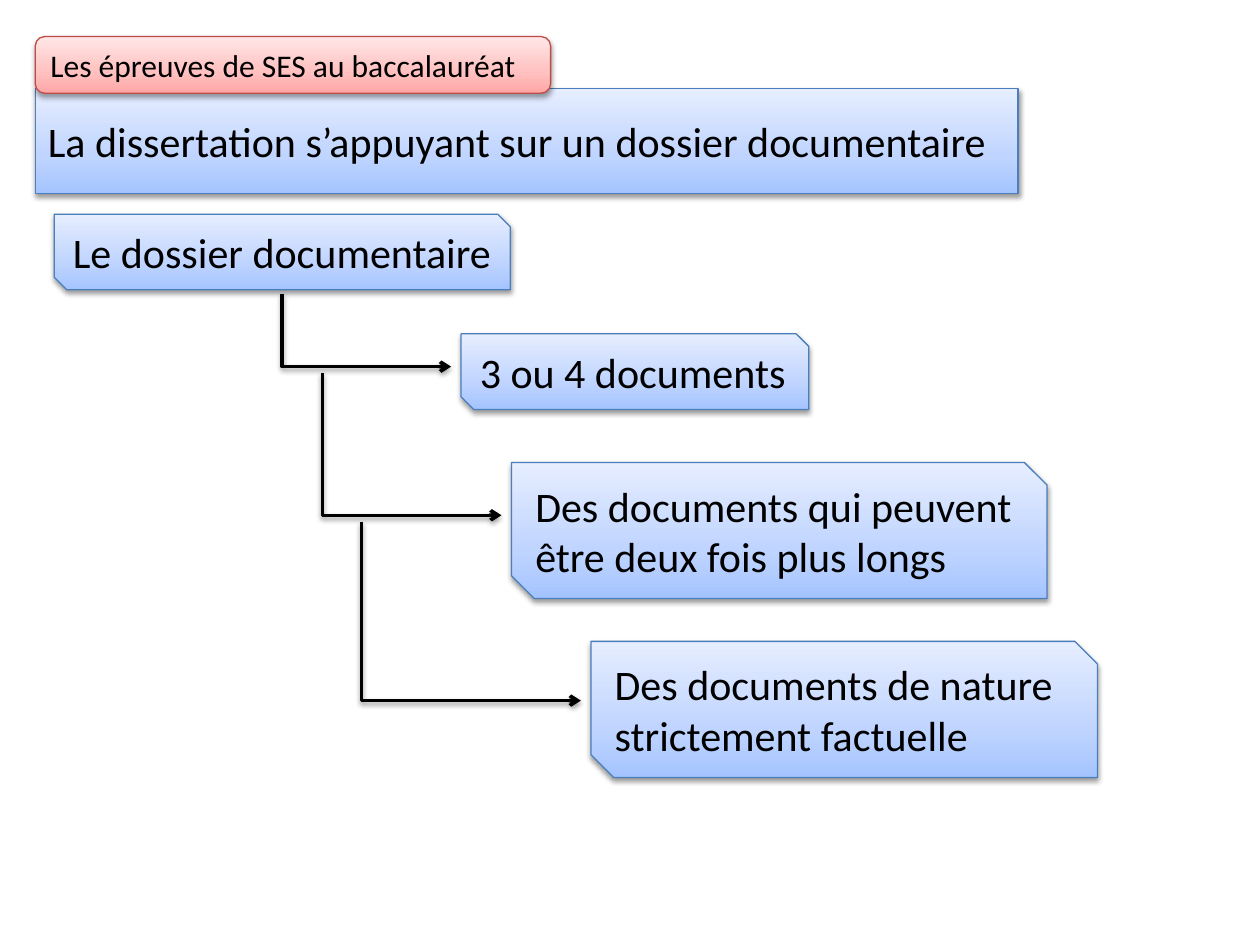
from copy import deepcopy

from pptx import Presentation
from pptx.dml import color
from pptx.enum import shapes, text
from pptx.oxml import parse_xml
from pptx.oxml import ns
from pptx.util import Inches, Pt

BLUE = {"line": "4B7EBC", "stops": ["A4C4FF", "BFD4FF", "E6EEFF"]}
RED = {"line": "BF4C48", "stops": ["FFA6A5", "FFC0BF", "FFE7E7"]}
STOP_POSITIONS = [0, 0.35, 1]

SHADOW = (
    f'<a:effectLst {ns.nsdecls("a")}>'
    '<a:outerShdw blurRad="39370" dist="20320" dir="5400000" rotWithShape="0">'
    '<a:srgbClr val="000000"><a:alpha val="38000"/></a:srgbClr>'
    "</a:outerShdw></a:effectLst>"
)

SUBJECT = ("Les épreuves de SES au baccalauréat", (0.28, 0.29, 4.09, 0.45))
TITLE = ("La dissertation s’appuyant sur un dossier documentaire", (0.28, 0.84, 7.8, 0.56))
TOPICS = [
    ("Le dossier documentaire", (0.43, 1.7, 3.62, 0.6)),
    ("3 ou 4 documents", (3.66, 2.65, 2.76, 0.6)),
    ("Des documents qui peuvent être deux fois plus longs", (4.06, 3.67, 4.25, 1.08)),
    ("Des documents de nature strictement factuelle", (4.69, 5.09, 4.02, 1.08)),
]
ARROWS = [
    (2.24, 2.33, 3.58, 2.91),
    (2.56, 2.96, 3.98, 4.09),
    (2.87, 4.14, 4.61, 5.56),
]


def rgb(value):
    return color.RGBColor.from_string(value)


def set_attributes(target, values):
    for name, value in values.items():
        setattr(target, name, value)


def fill_gradient(shape, colours):
    shape.fill.gradient()
    shape.fill.gradient_angle = 90
    first_stop = next(shape.element.spPr.iter(ns.qn("a:gs")))
    first_stop.addnext(deepcopy(first_stop))
    for stop, position, colour in zip(shape.fill.gradient_stops, STOP_POSITIONS, colours):
        stop.position = position
        stop.color.rgb = rgb(colour)


def write_text(shape, wording, size):
    frame = shape.text_frame
    frame.text = wording
    set_attributes(frame, {
        "word_wrap": True,
        "auto_size": text.MSO_AUTO_SIZE.SHAPE_TO_FIT_TEXT,
        "vertical_anchor": text.MSO_ANCHOR.MIDDLE,
    })
    paragraph = frame.paragraphs[0]
    paragraph.alignment = text.PP_ALIGN.LEFT
    set_attributes(paragraph.runs[0].font, {"name": "Calibri", "size": Pt(size)})
    paragraph.runs[0].font.color.rgb = rgb("000000")


def style_box(shape, wording, size, palette):
    fill_gradient(shape, palette["stops"])
    shape.line.color.rgb = rgb(palette["line"])
    shape.line.width = Pt(0.75)
    shape.element.spPr.append(parse_xml(SHADOW))
    write_text(shape, wording, size)


def add_box(slide, kind, wording, box, size, palette):
    shape = slide.shapes.add_shape(kind, *map(Inches, box))
    style_box(shape, wording, size, palette)


def add_title(slide, wording, box):
    title = slide.shapes.title
    set_attributes(title, dict(zip(("left", "top", "width", "height"), map(Inches, box))))
    title.element.spPr.append(parse_xml(
        f'<a:prstGeom {ns.nsdecls("a")} prst="roundRect"><a:avLst/></a:prstGeom>'
    ))
    style_box(title, wording, 24, BLUE)


def add_arrow(slide, ends):
    connector = slide.shapes.add_connector(shapes.MSO_CONNECTOR.ELBOW, *map(Inches, ends))
    connector.line.color.rgb = rgb("000000")
    connector.line.width = Pt(2)
    properties = connector.element.spPr
    properties.find(ns.qn("a:ln")).append(
        parse_xml(f'<a:tailEnd {ns.nsdecls("a")} type="arrow"/>')
    )
    geometry = properties.find(ns.qn("a:prstGeom"))
    for guides in geometry.findall(ns.qn("a:avLst")):
        geometry.remove(guides)
    geometry.append(parse_xml(
        f'<a:avLst {ns.nsdecls("a")}><a:gd name="adj1" fmla="val 0"/></a:avLst>'
    ))
    properties.append(parse_xml(SHADOW))


def main():
    presentation = Presentation()
    set_attributes(presentation, {"slide_width": Inches(10), "slide_height": Inches(7.5)})
    slide = presentation.slides.add_slide(presentation.slide_layouts[5])
    add_box(slide, shapes.MSO_SHAPE.ROUNDED_RECTANGLE, *SUBJECT, 18, RED)
    add_title(slide, *TITLE)
    for topic in TOPICS:
        add_box(slide, shapes.MSO_SHAPE.SNIP_2_DIAG_RECTANGLE, *topic, 24, BLUE)
    for ends in ARROWS:
        add_arrow(slide, ends)
    presentation.save("out.pptx")


if __name__ == "__main__":
    main()
